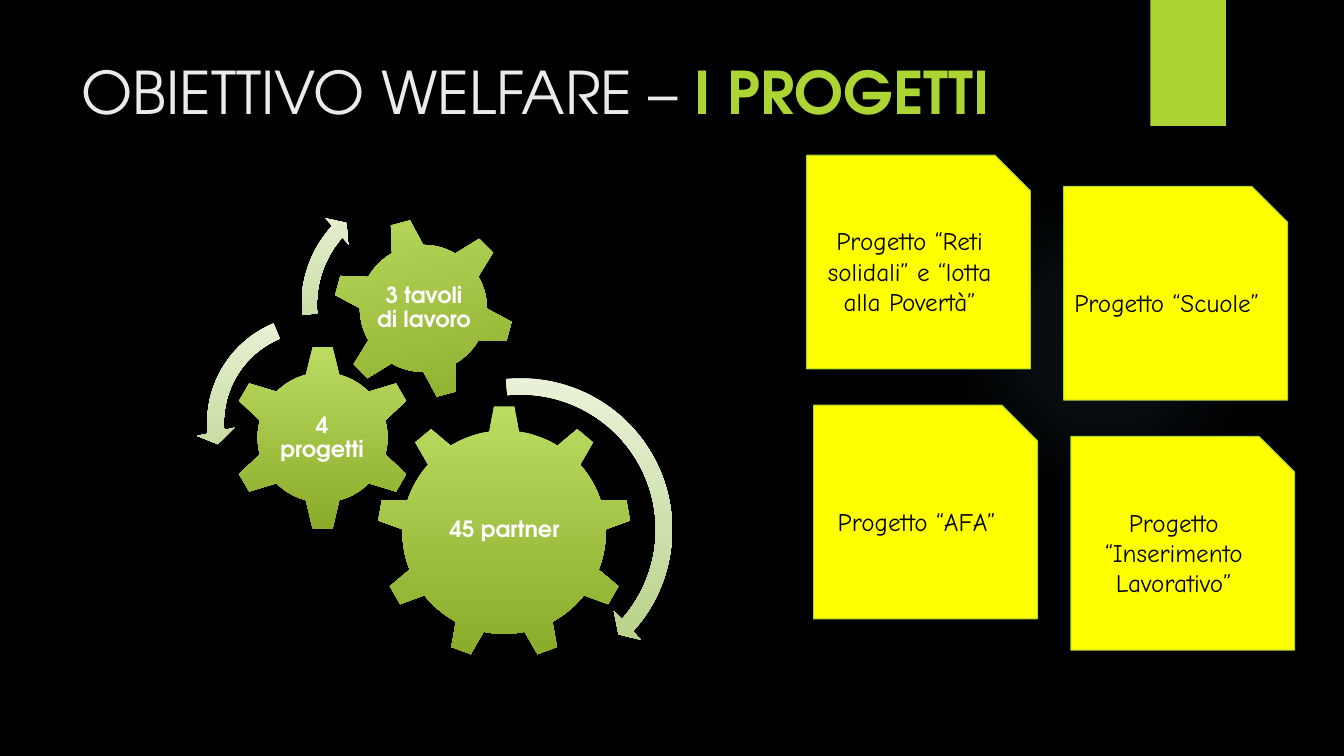
from dataclasses import dataclass

from lxml.etree import SubElement
from pptx import Presentation
from pptx.dml.color import RGBColor
from pptx.enum.shapes import MSO_SHAPE
from pptx.enum.text import MSO_ANCHOR, MSO_AUTO_SIZE, PP_ALIGN
from pptx.oxml.ns import qn
from pptx.shapes.autoshape import Shape
from pptx.slide import Slide
from pptx.text.text import TextFrame
from pptx.util import Inches, Pt

COLORS = {
    "background": "000000",
    "accent": "ACD433",
    "title": "EBEBEB",
    "glow": "7AC4F0",
    "gear_top": "BCDC62",
    "gear_bottom": "8AAA29",
    "arrow_top": "ECF4DC",
    "arrow_bottom": "AECB7A",
    "note": "FFFF00",
    "note_text": "000000",
    "gear_text": "FFFFFF",
}
HEADING_FONT = "TeX Gyre Adventor"
NOTE_FONT = "Comic Neue"
TITLE_FORMAT = {"name": HEADING_FONT, "size": Pt(42)}
GEAR_FORMAT = {"name": HEADING_FONT, "size": Pt(16), "bold": True}
NOTE_FORMAT = {"name": NOTE_FONT, "size": Pt(18), "bold": False}
GEAR_FRAME = {
    "word_wrap": True,
    "vertical_anchor": MSO_ANCHOR.MIDDLE,
    "margin_left": Inches(0.02),
    "margin_right": Inches(0.02),
    "margin_top": Inches(0.02),
    "margin_bottom": Inches(0.02),
}
NOTE_FRAME = {"word_wrap": True, "vertical_anchor": MSO_ANCHOR.MIDDLE}
TITLE_FRAME = {
    "word_wrap": True,
    "vertical_anchor": MSO_ANCHOR.TOP,
    "auto_size": MSO_AUTO_SIZE.NONE,
}


@dataclass
class Box:
    left: float
    top: float
    width: float
    height: float

    def lengths(self) -> list:
        return [Inches(v) for v in (self.left, self.top, self.width, self.height)]


@dataclass
class Gear:
    kind: MSO_SHAPE
    box: Box
    label: str
    label_box: Box
    rotation: float = 0


@dataclass
class TurnArrow:
    kind: MSO_SHAPE
    box: Box
    adjustments: tuple


@dataclass
class Note:
    column: int
    row: int
    label: str

    def box(self) -> Box:
        left = 8 + 2.55 * self.column + 0.07 * self.row
        top = 1.54 + 0.31 * self.column + 2.48 * self.row
        return Box(left, top, 2.22, 2.12)


GEARS = [
    Gear(MSO_SHAPE.GEAR_9, Box(3.74, 4.02, 2.52, 2.52),
         "45 partner", Box(4.25, 4.61, 1.51, 1.3)),
    Gear(MSO_SHAPE.GEAR_6, Box(2.28, 3.42, 1.84, 1.84),
         "4 progetti", Box(2.74, 3.89, 0.91, 0.91)),
    Gear(MSO_SHAPE.GEAR_6, Box(3.3, 2.16, 1.8, 1.8),
         "3 tavoli di lavoro", Box(3.7, 2.55, 1.01, 1.01), 345),
]
TURN_ARROWS = [
    TurnArrow(MSO_SHAPE.CIRCULAR_ARROW, Box(3.55, 3.64, 3.23, 3.23),
              (0.05, 2.99, 25.16, 158.61, 0.06)),
    TurnArrow(MSO_SHAPE.LEFT_CIRCULAR_ARROW, Box(1.95, 3.02, 2.35, 2.35),
              (0.07, 4.3, 104.89, 148.38, 0.08)),
    TurnArrow(MSO_SHAPE.CIRCULAR_ARROW, Box(2.89, 1.76, 2.53, 2.53),
              (0.06, 3.94, 133.14, 105.08, 0.07)),
]
NOTES = [
    Note(1, 0, "Progetto “Scuole”"),
    Note(0, 0, "Progetto “Reti solidali” e “lotta alla Povertà”"),
    Note(0, 1, "Progetto “AFA”"),
    Note(1, 1, "Progetto “Inserimento Lavorativo”"),
]


def rgb(color: str) -> RGBColor:
    return RGBColor.from_string(COLORS[color])


def apply(target: object, values: dict) -> None:
    for attribute, value in values.items():
        setattr(target, attribute, value)


def add_plain_shape(slide: Slide, kind: MSO_SHAPE, box: Box) -> Shape:
    shape = slide.shapes.add_shape(kind, *box.lengths())
    shape.shadow.inherit = False
    shape.line.fill.background()
    return shape


def fill_solid(shape: Shape, color: str) -> None:
    shape.fill.solid()
    shape.fill.fore_color.rgb = rgb(color)


def fill_downward(shape: Shape, top: str, bottom: str) -> None:
    shape.fill.gradient()
    shape.fill.gradient_angle = 270
    for stop, position, color in zip(shape.fill.gradient_stops, (0, 1), (top, bottom)):
        stop.position = position
        stop.color.rgb = rgb(color)


def write_label(frame: TextFrame, label: str, frame_format: dict,
                font_format: dict, color: str) -> None:
    apply(frame, frame_format)
    paragraph = frame.paragraphs[0]
    paragraph.alignment = PP_ALIGN.CENTER
    run = paragraph.add_run()
    run.text = label
    apply(run.font, font_format)
    run.font.color.rgb = rgb(color)


def add_glow(slide: Slide) -> None:
    glow = add_plain_shape(slide, MSO_SHAPE.OVAL, Box(9.41, 1.83, 3.08, 3.08))
    glow.fill.gradient()
    gradient = glow._element.spPr.find(qn("a:gradFill"))
    for child in list(gradient):
        gradient.remove(child)
    stops = SubElement(gradient, qn("a:gsLst"))
    for position, alpha in ((0, 7), (36, 6), (69, 0)):
        stop = SubElement(stops, qn("a:gs"), pos=str(position * 1000))
        color = SubElement(stop, qn("a:srgbClr"), val=COLORS["glow"])
        SubElement(color, qn("a:alpha"), val=str(alpha * 1000))
    radial = SubElement(gradient, qn("a:path"), {"path": "circle"})
    SubElement(radial, qn("a:fillToRect"), dict.fromkeys("ltrb", "50000"))


def add_title(slide: Slide) -> None:
    title = slide.shapes.title
    title.left, title.top, title.width, title.height = Box(0.71, 0.5, 10.29, 1.53).lengths()
    apply(title.text_frame, TITLE_FRAME)
    paragraph = title.text_frame.paragraphs[0]
    paragraph.alignment = PP_ALIGN.LEFT
    for words, color, bold in (("OBIETTIVO WELFARE – ", "title", False),
                               ("I PROGETTI", "accent", True)):
        run = paragraph.add_run()
        run.text = words
        apply(run.font, {**TITLE_FORMAT, "bold": bold})
        run.font.color.rgb = rgb(color)


def add_gear(slide: Slide, gear: Gear) -> None:
    wheel = add_plain_shape(slide, gear.kind, gear.box)
    wheel.rotation = gear.rotation
    fill_downward(wheel, "gear_top", "gear_bottom")
    label = slide.shapes.add_textbox(*gear.label_box.lengths())
    write_label(label.text_frame, gear.label, GEAR_FRAME, GEAR_FORMAT, "gear_text")
    label.text_frame.paragraphs[0].line_spacing = 0.9


def add_turn_arrow(slide: Slide, turn: TurnArrow) -> None:
    arrow = add_plain_shape(slide, turn.kind, turn.box)
    for index, value in enumerate(turn.adjustments):
        arrow.adjustments[index] = value
    fill_downward(arrow, "arrow_top", "arrow_bottom")


def add_note(slide: Slide, note: Note) -> None:
    card = add_plain_shape(slide, MSO_SHAPE.SNIP_1_RECTANGLE, note.box())
    fill_solid(card, "note")
    card.line.color.rgb = rgb("accent")
    card.line.width = Pt(0.75)
    write_label(card.text_frame, note.label, NOTE_FRAME, NOTE_FORMAT, "note_text")


def main() -> None:
    presentation = Presentation()
    presentation.slide_width = Inches(13.33)
    presentation.slide_height = Inches(7.5)
    slide = presentation.slides.add_slide(presentation.slide_layouts[5])
    fill_solid(slide.background, "background")
    add_glow(slide)
    fill_solid(add_plain_shape(slide, MSO_SHAPE.RECTANGLE, Box(11.41, 0, 0.75, 1.25)), "accent")
    add_title(slide)
    for gear in GEARS:
        add_gear(slide, gear)
    for turn in TURN_ARROWS:
        add_turn_arrow(slide, turn)
    for note in NOTES:
        add_note(slide, note)
    presentation.save("out.pptx")


if __name__ == "__main__":
    main()
